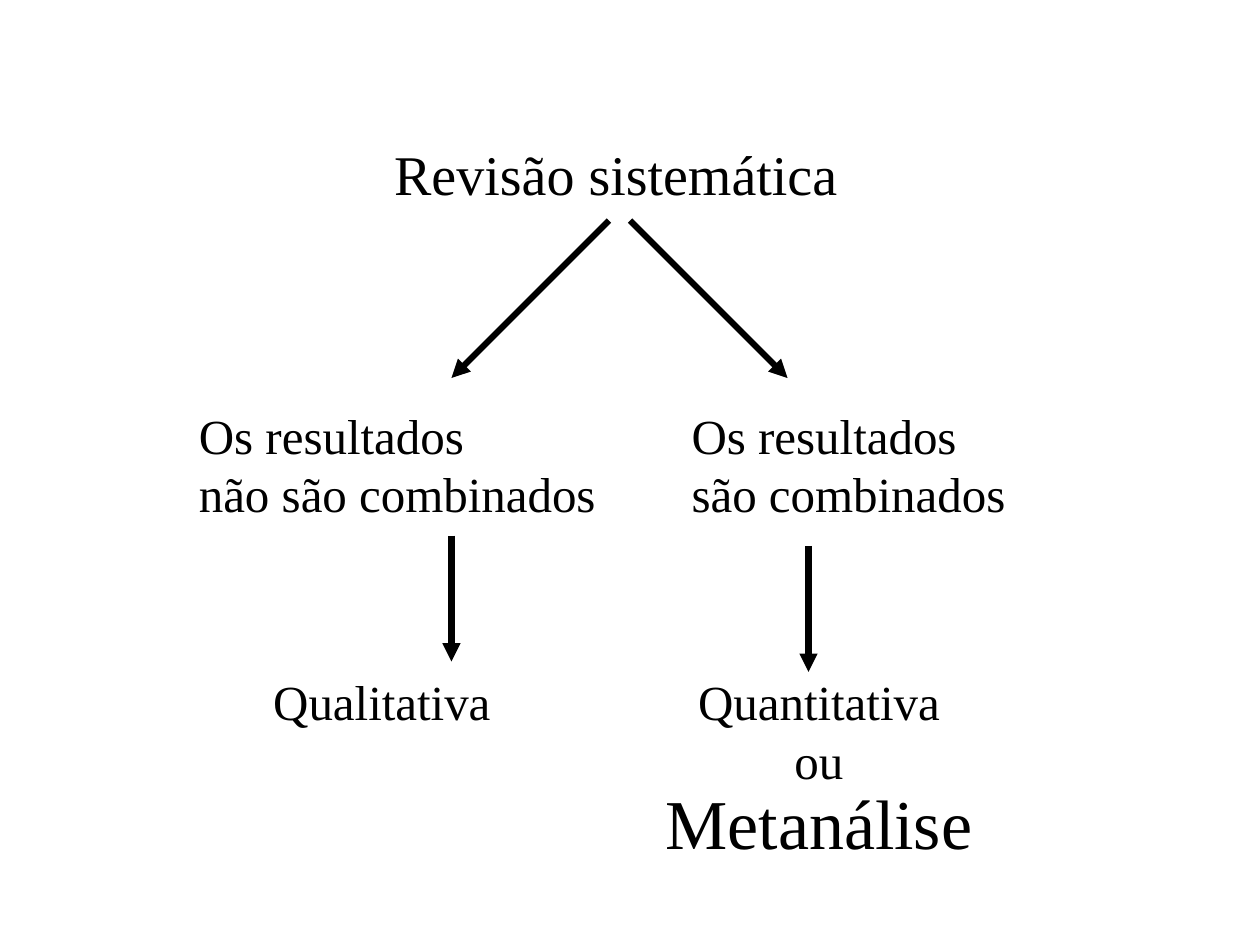
from lxml.etree import SubElement
from pptx import Presentation
from pptx.dml.color import RGBColor
from pptx.enum.shapes import MSO_CONNECTOR
from pptx.enum.text import MSO_AUTO_SIZE, PP_ALIGN
from pptx.oxml.ns import qn
from pptx.util import Inches, Pt

CELL = Inches(1) / 12  # the slide is a grid of 120 columns by 90 rows
FONT = "Times New Roman"
INK = "000000"


def cells(*counts):
    return [round(n * CELL) for n in counts]


def color(text):
    return RGBColor.from_string(text)


def label(slide, box, lines, align=PP_ALIGN.LEFT):
    """Write lines of (text, size, line spacing) in a box."""
    frame = slide.shapes.add_textbox(*cells(*box)).text_frame
    frame.word_wrap = False
    frame.auto_size = MSO_AUTO_SIZE.SHAPE_TO_FIT_TEXT
    for i, (text, size, gap) in enumerate(lines):
        para = frame.add_paragraph() if i else frame.paragraphs[0]
        para.alignment = align
        para.line_spacing = gap
        run = para.add_run()
        run.text = text
        run.font.name = FONT
        run.font.size = Pt(size)
        run.font.color.rgb = color(INK)


def arrow(slide, x, y, across, down):
    ends = cells(x, y, x + across, y + down)
    link = slide.shapes.add_connector(MSO_CONNECTOR.STRAIGHT, *ends)
    link.line.color.rgb = color(INK)
    link.line.width = Pt(3.5)
    SubElement(link.line._get_or_add_ln(), qn("a:tailEnd"), type="triangle")
    SubElement(link._element.spPr, qn("a:effectLst"))


def root(slide, box):
    """Place the title and the two arrows that fork below it."""
    left, top, width, height = box
    label(slide, box, [("Revisão sistemática", 32, None)])
    fork = top + height + 0.72
    arrow(slide, left + 21.64, fork, -15, 15)
    arrow(slide, left + 23.64, fork, 15, 15)


def branch(slide, box, claim, drop, result, align):
    """Place a claim, an arrow and a result; each starts from the box corner."""
    left, top, width, height = box
    shift, span, lines = claim
    label(slide, (left + shift, top, span, 12.36),
          [(text, 28, None) for text in lines])
    arrow(slide, left + drop[0], top + drop[1], 0, 12)
    shift, span, lines = result
    label(slide, (left + shift, top + 25.36, span, height - 25.36),
          lines, align)


def main():
    deck = Presentation()
    deck.slide_width, deck.slide_height = cells(120, 90)
    slide = deck.slides.add_slide(deck.slide_layouts[6])
    root(slide, (36.36, 12.72, 44.64, 7.56))
    branch(slide, (17.76, 38, 40.2, 32.2),
           (0, 40.2, ["Os resultados", "não são combinados"]),
           (25.24, 13),
           (7.08, 23.16, [("Qualitativa", 28, None)]),
           PP_ALIGN.LEFT)
    branch(slide, (62.16, 38, 34.8, 45.04),
           (2.52, 32.28, ["Os resultados", "são combinados"]),
           (14.84, 14),
           (0, 31.68, [("Quantitativa", 28, None), ("ou", 28, None),
                       ("Metanálise", 40, 0.9)]),
           PP_ALIGN.CENTER)
    deck.save("out.pptx")


if __name__ == "__main__":
    main()
